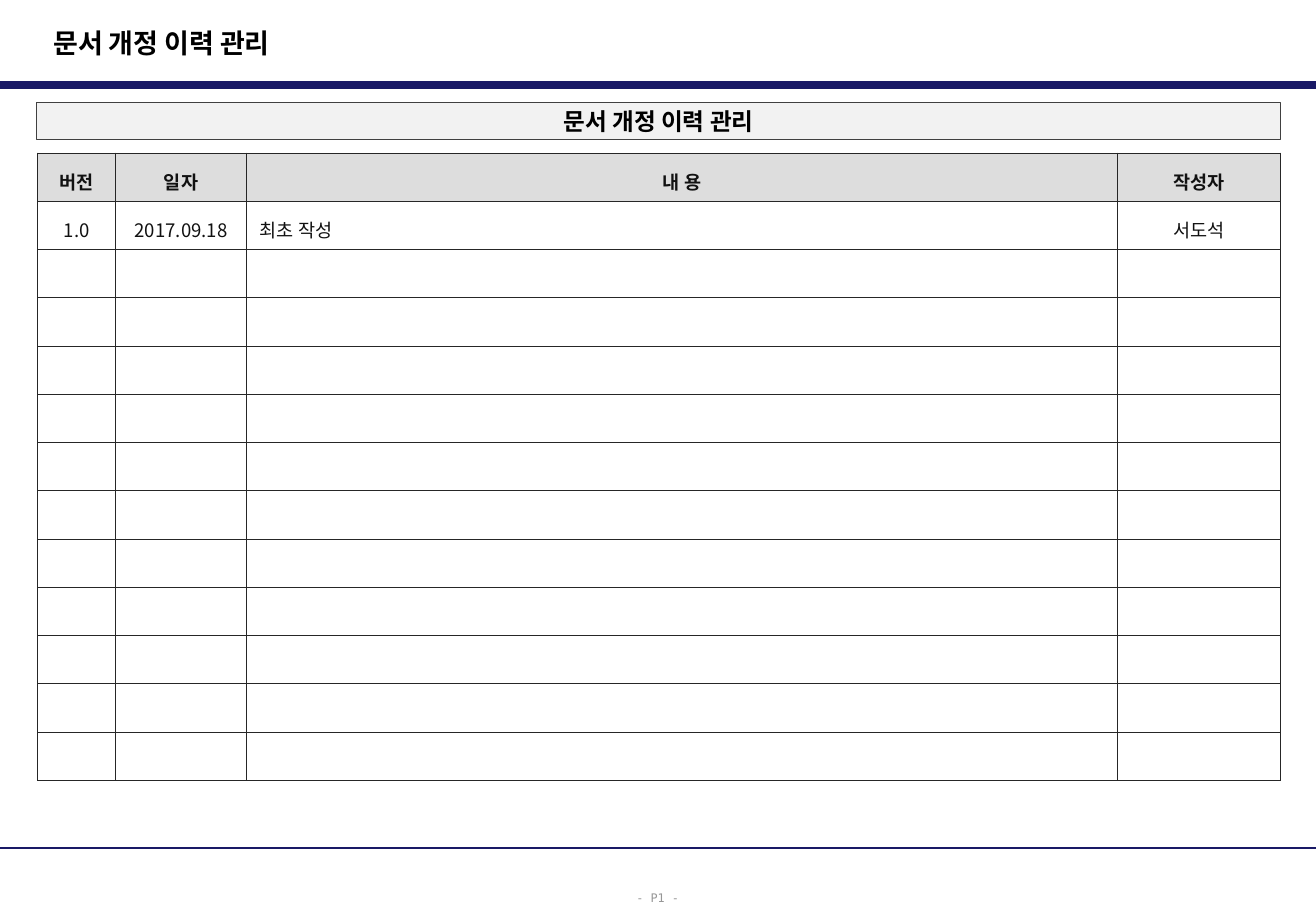
from dataclasses import dataclass

from lxml.etree import SubElement
from pptx import Presentation
from pptx.dml.color import RGBColor
from pptx.enum.shapes import MSO_CONNECTOR, MSO_SHAPE
from pptx.enum.text import MSO_ANCHOR, PP_ALIGN
from pptx.oxml.ns import qn
from pptx.util import Emu, Inches, Pt

NAVY = RGBColor(0x19, 0x19, 0x66)
BLACK = RGBColor(0, 0, 0)
INK = RGBColor(0x11, 0x11, 0x11)
BORDER = RGBColor(0x26, 0x26, 0x26)
BAR_LINE = RGBColor(0x40, 0x40, 0x40)
BAR_FILL = RGBColor(0xF2, 0xF2, 0xF2)
HEADER_FILL = RGBColor(0xDD, 0xDD, 0xDD)
PAGE_GRAY = RGBColor(0x96, 0x96, 0x96)
KOREAN_FONT = "Noto Sans CJK KR"
MONO_FONT = "DejaVu Sans Mono"
SLIDE_WIDTH, SLIDE_HEIGHT = Inches(10.83), Inches(7.5)
HEADING = "문서 개정 이력 관리"


@dataclass(frozen=True)
class Area:
    """A box in percent of the slide's width and height."""
    left: float
    top: float
    width: float
    height: float

    def box(self) -> tuple[Emu, Emu, Emu, Emu]:
        return across(self.left), down(self.top), across(self.width), down(self.height)


@dataclass(frozen=True)
class Rule:
    top: float
    weight: float


@dataclass(frozen=True)
class Column:
    heading: str
    width: float
    first_entry: str
    align: PP_ALIGN = PP_ALIGN.CENTER


RULES = [Rule(9.33, 4.5), Rule(93.07, 1.5)]
COLUMNS = [
    Column("버전", 5.93, "1.0"),
    Column("일자", 9.95, "2017.09.18"),
    Column("내 용", 66.19, "최초 작성", PP_ALIGN.LEFT),
    Column("작성자", 12.39, "서도석"),
]
ROW_COUNT, ROW_HEIGHT = 13, 5.3
TABLE_LEFT, TABLE_TOP = 2.86, 16.8


def across(percent: float) -> Emu:
    return Emu(round(SLIDE_WIDTH * percent / 100))


def down(percent: float) -> Emu:
    return Emu(round(SLIDE_HEIGHT * percent / 100))


def write(frame, text: str, *, size: float, color: RGBColor, font: str = KOREAN_FONT,
          bold: bool = False, align: PP_ALIGN = PP_ALIGN.LEFT,
          spacing: float | None = None, wrap: bool = True) -> None:
    frame.word_wrap = wrap
    paragraph = frame.paragraphs[0]
    paragraph.alignment = align
    paragraph.line_spacing = spacing
    run = paragraph.add_run()
    run.text = text
    run.font.size, run.font.bold, run.font.name = Pt(size), bold, font
    run.font.color.rgb = color
    SubElement(run.font._element, qn("a:ea"), typeface=font)


def draw_rule(slide, rule: Rule) -> None:
    top = down(rule.top)
    connector = slide.shapes.add_connector(MSO_CONNECTOR.STRAIGHT, 0, top, SLIDE_WIDTH, top)
    connector.line.color.rgb = NAVY
    connector.line.width = Pt(rule.weight)
    SubElement(connector._element.spPr, qn("a:effectLst"))


def draw_text(slide, area: Area, text: str, anchor: MSO_ANCHOR, **text_format) -> None:
    frame = slide.shapes.add_textbox(*area.box()).text_frame
    frame.vertical_anchor = anchor
    write(frame, text, **text_format)


def draw_bar(slide, area: Area, text: str) -> None:
    shape = slide.shapes.add_shape(MSO_SHAPE.RECTANGLE, *area.box())
    shape.shadow.inherit = False
    shape.fill.solid()
    shape.fill.fore_color.rgb = BAR_FILL
    shape.line.color.rgb = BAR_LINE
    shape.line.width = Pt(0.5)
    shape.text_frame.vertical_anchor = MSO_ANCHOR.MIDDLE
    write(shape.text_frame, text, size=14, color=BLACK, bold=True,
          align=PP_ALIGN.CENTER, wrap=False)


def add_borders(cell) -> None:
    properties = cell._tc.get_or_add_tcPr()
    for position, side in enumerate(("lnL", "lnR", "lnT", "lnB")):
        line = SubElement(properties, qn(f"a:{side}"), w=str(Pt(0.5)))
        fill = SubElement(line, qn("a:solidFill"))
        SubElement(fill, qn("a:srgbClr"), val=str(BORDER))
        properties.insert(position, line)


def draw_history(slide) -> None:
    area = Area(TABLE_LEFT, TABLE_TOP, sum(column.width for column in COLUMNS),
                ROW_COUNT * ROW_HEIGHT)
    table = slide.shapes.add_table(ROW_COUNT, len(COLUMNS), *area.box()).table
    table.first_row = table.horz_banding = False
    for row in table.rows:
        row.height = down(ROW_HEIGHT)
    for column_index, column in enumerate(COLUMNS):
        table.columns[column_index].width = across(column.width)
        for row_index in range(ROW_COUNT):
            cell = table.cell(row_index, column_index)
            cell.vertical_anchor = MSO_ANCHOR.MIDDLE
            cell.margin_left = cell.margin_right = across(1)
            is_header = row_index == 0
            if is_header:
                cell.fill.solid()
                cell.fill.fore_color.rgb = HEADER_FILL
            else:
                cell.fill.background()
            add_borders(cell)
            if row_index < 2:
                write(cell.text_frame, column.heading if is_header else column.first_entry,
                      size=11, color=INK, bold=is_header, spacing=1.3,
                      align=PP_ALIGN.CENTER if is_header else column.align)
            else:
                # Keeps empty rows from growing to the default text size
                SubElement(cell.text_frame.paragraphs[0]._p, qn("a:endParaRPr"), sz="1100")


def main() -> None:
    presentation = Presentation()
    presentation.slide_width, presentation.slide_height = SLIDE_WIDTH, SLIDE_HEIGHT
    slide = presentation.slides.add_slide(presentation.slide_layouts[6])

    # Page frame
    for rule in RULES:
        draw_rule(slide, rule)
    draw_text(slide, Area(47.46, 96.67, 5.17, 3.33), "- P1 -", MSO_ANCHOR.TOP,
              size=7, color=PAGE_GRAY, font=MONO_FONT, spacing=1.3, wrap=False)

    # Revision history
    draw_history(slide)

    # Title and heading bar
    draw_text(slide, Area(3.14, 2.13, 65.65, 5.07), HEADING, MSO_ANCHOR.MIDDLE,
              size=16, color=BLACK, bold=True)
    draw_bar(slide, Area(2.77, 11.2, 94.55, 4.13), HEADING)

    presentation.save("out.pptx")


if __name__ == "__main__":
    main()
